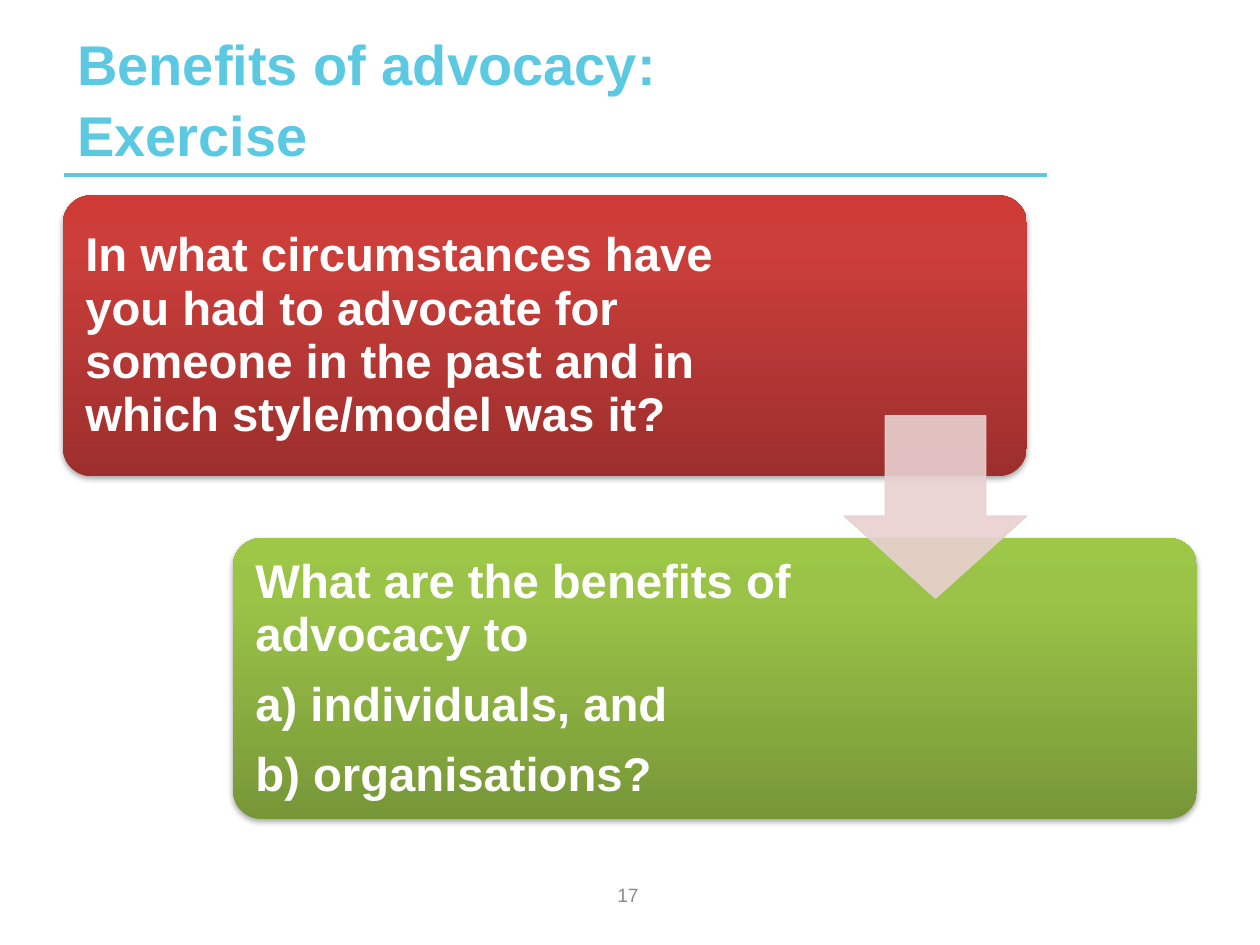
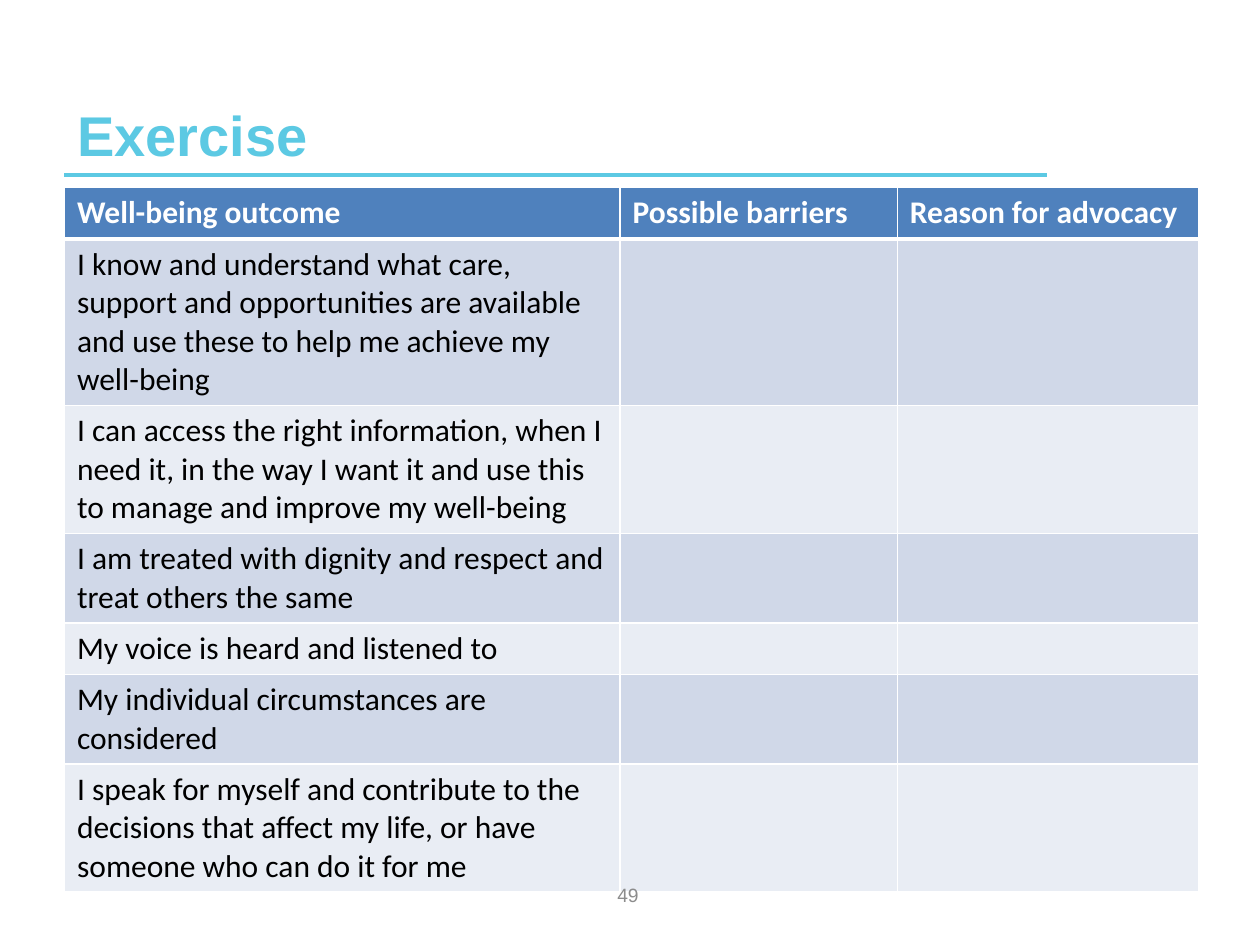
from copy import deepcopy
from dataclasses import dataclass

from lxml.etree import SubElement
from pptx import Presentation
from pptx.dml.color import RGBColor
from pptx.enum.shapes import MSO_CONNECTOR, MSO_SHAPE
from pptx.enum.text import MSO_ANCHOR, MSO_AUTO_SIZE, PP_ALIGN
from pptx.oxml.ns import qn
from pptx.util import Cm, Pt


@dataclass(frozen=True)
class Theme:
    heading_font: str = "Arial"
    table_font: str = "Calibri"
    title_size: float = 32
    card_size: float = 27
    table_size: float = 18
    number_size: float = 11
    accent: str = "5CC9E3"
    white: str = "FFFFFF"
    black: str = "000000"
    grey: str = "8C8C8C"
    arrow: str = "E8D0D0"
    table_header: str = "4F81BD"
    table_bands: tuple = ("D0D8E8", "E9EDF4")
    red: tuple = ((0, "9C2F2D"), (80, "CB3E3A"), (100, "CE3B37"))
    green: tuple = ((0, "779737"), (80, "9BC348"), (100, "9DC746"))


def rgb(value):
    return RGBColor.from_string(value)


def write_text(frame, text, *, font, size, color, bold=False, align=PP_ALIGN.LEFT,
               anchor=MSO_ANCHOR.MIDDLE, line_spacing=None, space_after=0, inset=None):
    """Fill a frame: a line feed starts a paragraph, a vertical tab breaks a line."""
    frame.word_wrap = True
    frame.auto_size = MSO_AUTO_SIZE.NONE
    frame.vertical_anchor = anchor
    if inset is not None:
        frame.margin_left = frame.margin_right = Cm(inset)
        frame.margin_top = frame.margin_bottom = Cm(inset)
    frame.text = text
    for paragraph in frame.paragraphs:
        paragraph.alignment = align
        paragraph.space_after = Pt(space_after)
        if line_spacing:
            paragraph.line_spacing = line_spacing
        for run in paragraph.runs:
            run.font.name = font
            run.font.size = Pt(size)
            run.font.bold = bold
            run.font.color.rgb = rgb(color)
        for line_break in paragraph._p.findall(qn("a:br")):
            line_break.append(deepcopy(paragraph.runs[0]._r.rPr))


def add_color(parent, color, opacity=100):
    element = SubElement(parent, qn("a:srgbClr"), val=color)
    if opacity < 100:
        SubElement(element, qn("a:alpha"), val=str(opacity * 1000))


def set_gradient(shape, stops):
    shape.fill.gradient()
    shape.fill.gradient_angle = 90
    stop_list = shape._element.spPr.find(qn("a:gradFill")).find(qn("a:gsLst"))
    stop_list.clear()
    for position, color in stops:
        add_color(SubElement(stop_list, qn("a:gs"), pos=str(position * 1000)), color)


def set_shadow(shape):
    shape.shadow.inherit = False
    effects = shape._element.spPr.find(qn("a:effectLst"))
    shadow = SubElement(effects, qn("a:outerShdw"), blurRad=str(Pt(3.1)),
                        dist=str(Pt(1.8)), dir="5400000", rotWithShape="0")
    add_color(shadow, "000000", 35)


def set_borders(cell, color, **widths):
    """Draw the cell's edges; widths maps L, R, T and B to points."""
    properties = cell._tc.get_or_add_tcPr()
    for index, (side, width) in enumerate(widths.items()):
        line = SubElement(properties, qn(f"a:ln{side}"), w=str(Pt(width)))
        add_color(SubElement(line, qn("a:solidFill")), color)
        properties.insert(index, line)


class SlideBuilder:
    def __init__(self, presentation, theme):
        self.presentation = presentation
        self.theme = theme
        self.slide = None

    def start(self, title, number):
        """Add a slide with its title, rule and page number."""
        theme = self.theme
        self.slide = self.presentation.slides.add_slide(
            self.presentation.slide_layouts[5])
        self.rule(1.3, 21.11, 3.53)
        heading = self.slide.shapes.title
        heading.left, heading.top = Cm(1.3), Cm(0.74)
        heading.width, heading.height = Cm(19.81), Cm(2.77)
        write_text(heading.text_frame, title, font=theme.heading_font,
                   size=theme.title_size, color=theme.accent, bold=True,
                   anchor=MSO_ANCHOR.BOTTOM, line_spacing=1.06)
        self.number = number

    def finish(self):
        """Put the page number over everything else."""
        self.text(str(self.number), 9.7, 17.53, 5.92, 1.02,
                  size=self.theme.number_size, color=self.theme.grey,
                  align=PP_ALIGN.CENTER)

    def rule(self, left, right, top):
        line = self.slide.shapes.add_connector(
            MSO_CONNECTOR.STRAIGHT, Cm(left), Cm(top), Cm(right), Cm(top))
        line.line.color.rgb = rgb(self.theme.accent)
        line.line.width = Pt(2)
        SubElement(line._element.spPr, qn("a:effectLst"))

    def text(self, text, left, top, width, height, **text_format):
        box = self.slide.shapes.add_textbox(Cm(left), Cm(top), Cm(width), Cm(height))
        write_text(box.text_frame, text, font=self.theme.heading_font, **text_format)

    def card(self, text, left, top, text_width, stops):
        """Add a shaded rounded card whose text keeps to its left part."""
        width, height, padding = 19.43, 5.66, 0.17
        card = self.slide.shapes.add_shape(
            MSO_SHAPE.ROUNDED_RECTANGLE, Cm(left), Cm(top), Cm(width), Cm(height))
        card.adjustments[0] = 0.1
        card.line.fill.background()
        set_gradient(card, stops)
        set_shadow(card)
        self.text(text, left + padding, top + padding, text_width,
                  height - 2 * padding, size=self.theme.card_size,
                  color=self.theme.white, bold=True, line_spacing=0.94,
                  space_after=9.45, inset=0.28)

    def down_arrow(self, left, top, size):
        arrow = self.slide.shapes.add_shape(
            MSO_SHAPE.DOWN_ARROW, Cm(left), Cm(top), Cm(size), Cm(size))
        arrow.adjustments[0], arrow.adjustments[1] = 0.55, 0.45
        arrow.shadow.inherit = False
        arrow.fill.solid()
        arrow.fill.fore_color.rgb = rgb(self.theme.arrow)
        arrow.line.color.rgb = rgb(self.theme.arrow)
        arrow.line.width = Pt(0.75)
        for color in arrow._element.spPr.iter(qn("a:srgbClr")):
            SubElement(color, qn("a:alpha"), val="90000")

    def table(self, headers, first_column, left, top, widths, row_height):
        theme = self.theme
        rows = [headers] + [(text, "", "") for text in first_column]
        table = self.slide.shapes.add_table(
            len(rows), len(widths), Cm(left), Cm(top), Cm(sum(widths)),
            Cm(row_height * len(rows))).table
        for column, width in zip(table.columns, widths):
            column.width = Cm(width)
        for row_index, texts in enumerate(rows):
            is_header = row_index == 0
            table.rows[row_index].height = Cm(row_height)
            fill = theme.table_header if is_header else theme.table_bands[(row_index - 1) % 2]
            for column_index, text in enumerate(texts):
                cell = table.cell(row_index, column_index)
                cell.fill.solid()
                cell.fill.fore_color.rgb = rgb(fill)
                set_borders(cell, theme.white, L=1, R=1,
                            T=3 if row_index == 1 else 1, B=3 if is_header else 1)
                if text:
                    write_text(cell.text_frame, text, font=theme.table_font,
                               size=theme.table_size, bold=is_header,
                               color=theme.white if is_header else theme.black,
                               anchor=None)


def main():
    presentation = Presentation()
    presentation.slide_width, presentation.slide_height = Cm(25.4), Cm(19.05)
    theme = Theme()
    builder = SlideBuilder(presentation, theme)

    builder.start("Benefits of advocacy:\vExercise", 17)
    builder.card("In what circumstances have you had to advocate for someone in "
                 "the past and in which style/model was it?",
                 1.27, 3.94, 13.59, theme.red)
    builder.card("What are the benefits of advocacy to\na) individuals, and\n"
                 "b) organisations?", 4.7, 10.85, 11.99, theme.green)
    builder.down_arrow(17.02, 8.38, 3.68)
    builder.finish()

    builder.start("Exercise", 49)
    builder.table(
        ("Well-being outcome", "Possible barriers", "Reason for advocacy"),
        ("I know and understand what care, support and opportunities are available "
         "and use these to help me achieve my well-being",
         "I can access the right information, when I need it, in the way I want it "
         "and use this to manage and improve my well-being",
         "I am treated with dignity and respect and treat others the same",
         "My voice is heard and listened to",
         "My individual circumstances are considered",
         "I speak for myself and contribute to the decisions that affect my life, "
         "or have someone who can do it for me"),
        left=1.3, top=3.78, widths=(11.2, 5.59, 6.07), row_height=1.04)
    builder.finish()

    presentation.save("out.pptx")


if __name__ == "__main__":
    main()
